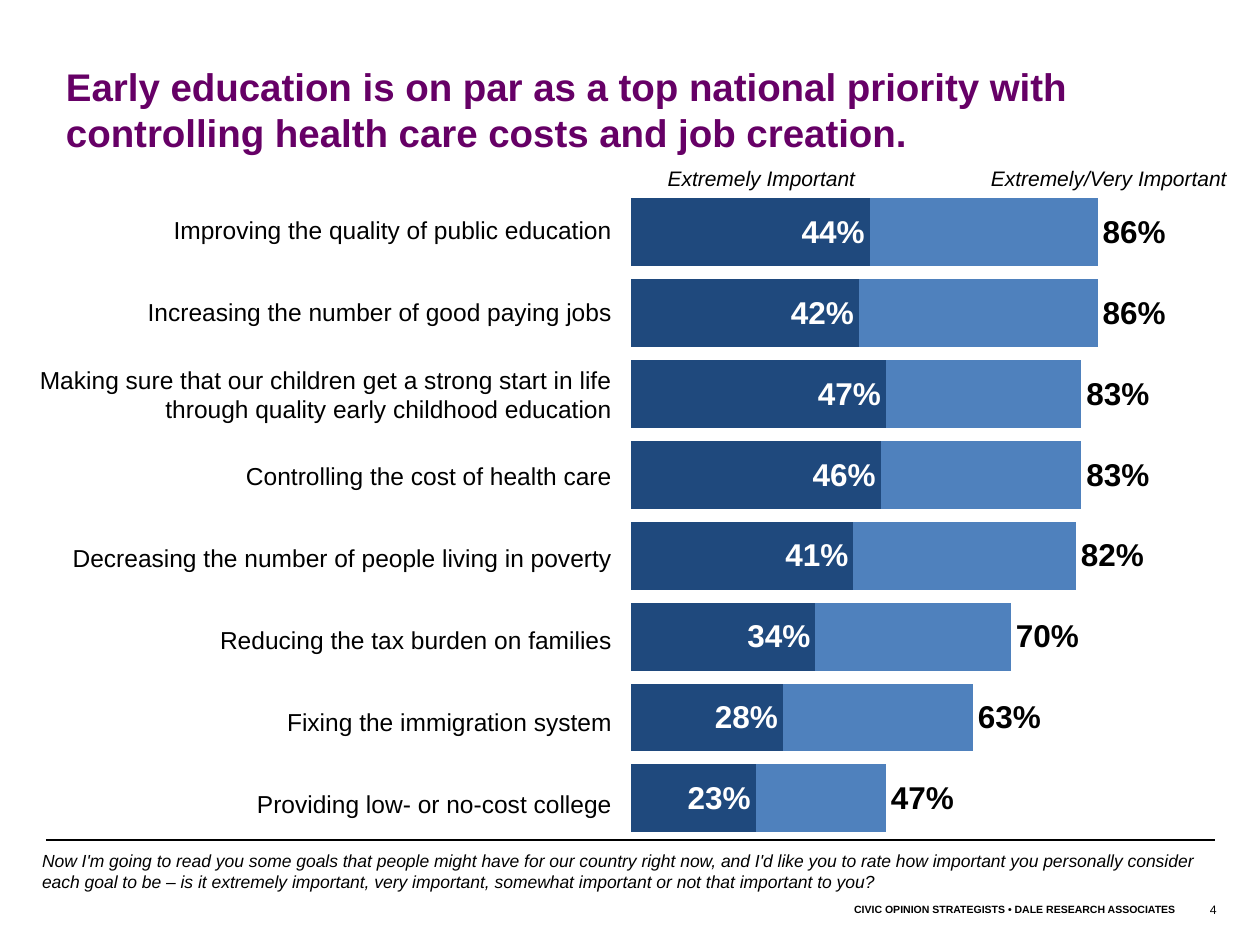
import pptx
import pptx.chart.data
import pptx.dml.color
import pptx.enum.chart
import pptx.enum.text
import pptx.oxml
import pptx.oxml.ns
import pptx.util

EMU_PER_PX = 914400 / 126
FONT = "Arial"
COLORS = {"text": "000000", "title": "660066", "extremely": "1F497D",
          "very": "4F81BD", "on_dark": "FFFFFF"}
# goal, extremely important, very important (percent)
GOALS = [
    ("Improving the quality of public education", 44, 42),
    ("Increasing the number of good paying jobs", 42, 44),
    ("Making sure that our children get a strong start in life "
     "through quality early childhood education", 47, 36),
    ("Controlling the cost of health care", 46, 37),
    ("Decreasing the number of people living in poverty", 41, 41),
    ("Reducing the tax burden on families", 34, 36),
    ("Fixing the immigration system", 28, 35),
    ("Providing low- or no-cost college", 23, 24),
]
LEFT = pptx.enum.text.PP_ALIGN.LEFT
CENTER = pptx.enum.text.PP_ALIGN.CENTER
RIGHT = pptx.enum.text.PP_ALIGN.RIGHT


def px(n):
    return pptx.util.Emu(round(n * EMU_PER_PX))


def rgb(name):
    return pptx.dml.color.RGBColor.from_string(COLORS[name])


def style(font, size, color="text", bold=False, italic=False):
    font.name, font.size = FONT, pptx.util.Pt(size)
    font.bold, font.italic = bold, italic
    font.color.rgb = rgb(color)


def add_text(s, box, text, size, align=LEFT, margins=(13, 6, 13, 6),
             anchor=pptx.enum.text.MSO_ANCHOR.TOP, **look):
    tf = s.shapes.add_textbox(*map(px, box)).text_frame
    tf.word_wrap = True
    tf.vertical_anchor = anchor
    tf.margin_left, tf.margin_top, tf.margin_right, tf.margin_bottom = map(px, margins)
    p = tf.paragraphs[0]
    p.text, p.alignment = text, align
    style(p.font, size, **look)


def add_bars(s, box):
    data = pptx.chart.data.CategoryChartData(number_format="0%")
    data.categories = [str(i + 1) for i in range(len(GOALS))]
    data.add_series("Extremely important", [a / 100 for _, a, _ in GOALS])
    data.add_series("Very important", [b / 100 for _, _, b in GOALS])
    data.add_series("Total", [(a + b) / 100 for _, a, b in GOALS])
    chart = s.shapes.add_chart(
        pptx.enum.chart.XL_CHART_TYPE.BAR_STACKED, *map(px, box), data).chart
    chart.has_legend = chart.has_title = False
    style(chart.font, 18)

    # Axes are hidden, with the first goal on top
    chart.category_axis.reverse_order = True
    chart.category_axis.visible = False
    axis = chart.value_axis
    axis.minimum_scale, axis.maximum_scale, axis.major_unit = 0, 1, 0.1
    axis.has_major_gridlines = False
    axis.visible = False

    plot = chart.plots[0]
    plot.gap_width, plot.overlap, plot.vary_by_categories = 19, 100, False
    extremely, very, total = plot.series
    for series, color in ((extremely, "extremely"), (very, "very")):
        series.format.fill.solid()
        series.format.fill.fore_color.rgb = rgb(color)
    total.format.fill.background()  # the total only carries its labels

    pos = pptx.enum.chart.XL_LABEL_POSITION
    for series, place, color in ((extremely, pos.INSIDE_END, "on_dark"),
                                 (total, pos.INSIDE_BASE, "text")):
        labels = series.data_labels
        labels.show_value, labels.position = True, place
        labels.number_format, labels.number_format_is_linked = "0%", False
        style(labels.font, 18, color, bold=True)

    # Fixed plot area, to line up with the goal labels
    area = chart._chartSpace.chart.plotArea
    for old in area.findall(pptx.oxml.ns.qn("c:layout")):
        area.remove(old)
    sizes = "".join(f'<c:{k} val="{v}"/>' for k, v in
                    (("x", 0.504), ("y", 0.062), ("w", 0.445), ("h", 0.938)))
    area.insert(0, pptx.oxml.parse_xml(
        f'<c:layout {pptx.oxml.ns.nsdecls("c")}><c:manualLayout>'
        '<c:layoutTarget val="inner"/><c:xMode val="edge"/><c:yMode val="edge"/>'
        f'{sizes}</c:manualLayout></c:layout>'))


def add_goal_labels(s, box):
    x, y, w, h = box
    pitch = h / len(GOALS)
    for i, (goal, _, _) in enumerate(GOALS):
        add_text(s, (x, y + i * pitch, w, pitch), goal, 14, RIGHT,
                 margins=(0, 6, 13, 6), anchor=pptx.enum.text.MSO_ANCHOR.MIDDLE)


def add_column_heads(s, box):
    x, y, w, h = box
    add_text(s, (x, y, 273, h), "Extremely Important", 12, CENTER, italic=True)
    add_text(s, (x + w - 300, y, 300, h), "Extremely/Very Important", 12, CENTER,
             italic=True)


def add_footer(s, box):
    x, y, w, h = box
    # Rule
    line = s.shapes.add_connector(1, px(x + 4), px(y), px(x + w - 8), px(y))
    line.line.color.rgb, line.line.width = rgb("text"), pptx.util.Pt(0.75)
    line._element.spPr.append(pptx.oxml.parse_xml(
        f'<a:effectLst {pptx.oxml.ns.nsdecls("a")}/>'))
    # Question wording
    add_text(s, (x, y + 10, w, 43),
             "Now I'm going to read you some goals that people might have for our "
             "country right now, and I'd like you to rate how important you personally "
             "consider each goal to be – is it extremely important, very important, "
             "somewhat important or not that important to you?",
             10, margins=(0, 0, 0, 0), italic=True)
    # Credit and slide number
    add_text(s, (x + w - 476, y + h - 48, 441, 25),
             "CIVIC OPINION STRATEGISTS • DALE RESEARCH ASSOCIATES", 6, RIGHT, bold=True)
    add_text(s, (x + w - 26, y + h - 49, 63, 28), "4", 7)


def main():
    prs = pptx.Presentation()
    prs.slide_width, prs.slide_height = px(1260), px(945)
    s = prs.slides.add_slide(prs.slide_layouts[6])
    add_bars(s, (16, 149, 1220, 690))
    add_footer(s, (42, 840, 1181, 105))
    add_text(s, (66, 63, 1192, 93),
             "Early education is on par as a top national priority with "
             "controlling health care costs and job creation.",
             22, margins=(0, 0, 0, 0), color="title", bold=True)
    add_goal_labels(s, (0, 189, 625, 656))
    add_column_heads(s, (625, 160, 634, 38))
    prs.save("out.pptx")


if __name__ == "__main__":
    main()
